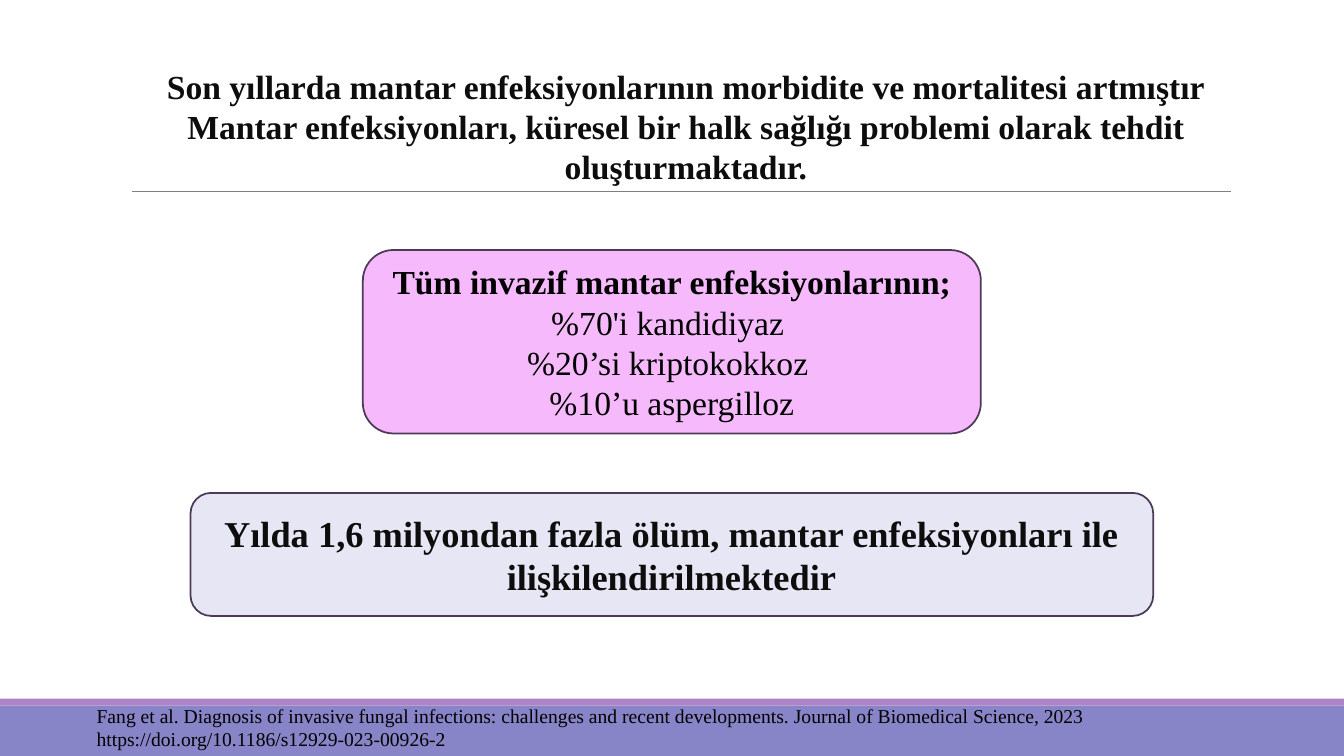
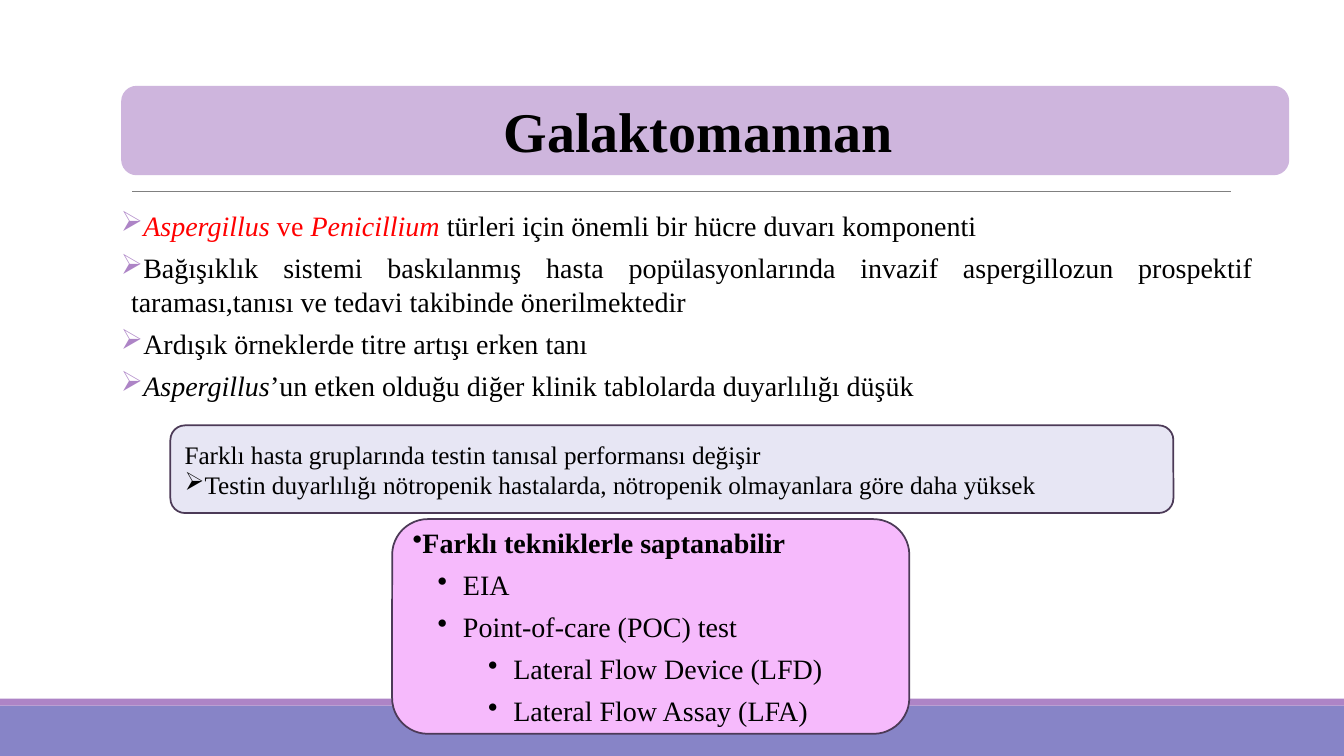
from lxml.etree import SubElement
from pptx import Presentation
from pptx.dml.color import RGBColor
from pptx.enum.shapes import MSO_CONNECTOR, MSO_SHAPE
from pptx.enum.text import MSO_ANCHOR, PP_ALIGN
from pptx.oxml.ns import qn
from pptx.util import Inches, Pt

WIDTH, HEIGHT = Inches(13.333), Inches(7.5)
FONT = "Times New Roman"
BLACK, INK, RED = "000000", "0D0D0D", "FF0000"
PURPLE, BLUE, OUTLINE, GREY = "AD84C6", "8784C7", "4C3A57", "808080"
PINK, LAVENDER, LILAC = "F6BAFC", "E7E6F4", "CEB5DD"
LEFT, CENTER, JUSTIFY = PP_ALIGN.LEFT, PP_ALIGN.CENTER, PP_ALIGN.JUSTIFY


def rgb(value):
    return RGBColor.from_string(value)


def share_x(percent):
    return int(WIDTH * percent / 100)


def share_y(percent):
    return int(HEIGHT * percent / 100)


def place(left, top, width, height):
    return share_x(left), share_y(top), share_x(width), share_y(height)


def add_panel(slide, area, fill, line=None, kind=MSO_SHAPE.ROUNDED_RECTANGLE):
    sp = slide.shapes.add_shape(kind, *place(*area))
    sp.shadow.inherit = False
    sp.fill.solid()
    sp.fill.fore_color.rgb = rgb(fill)
    if line:
        sp.line.color.rgb = rgb(line)
        sp.line.width = Pt(1.25)
    else:
        sp.line.fill.background()
    sp.text_frame.vertical_anchor = MSO_ANCHOR.MIDDLE
    return sp.text_frame


def add_text(slide, area):
    return slide.shapes.add_textbox(*place(*area)).text_frame


def add_rule(slide, left, right, y):
    line = slide.shapes.add_connector(
        MSO_CONNECTOR.STRAIGHT, share_x(left), share_y(y), share_x(right), share_y(y))
    line.line.color.rgb = rgb(GREY)
    line.line.width = Pt(0.5)
    SubElement(line._element.spPr, qn("a:effectLst"))


def set_bullet(p, char, color=None, margin=0, indent=0):
    pPr = p._p.get_or_add_pPr()
    pPr.set("marL", str(Inches(margin)))
    pPr.set("indent", str(Inches(indent)))
    if color:
        SubElement(SubElement(pPr, qn("a:buClr")), qn("a:srgbClr")).set("val", color)
    SubElement(pPr, qn("a:buChar")).set("char", char)


def format_run(r, size, color, bold=False, italic=False):
    r.font.name = FONT
    r.font.size = Pt(size)
    r.font.color.rgb = rgb(color)
    r.font.bold = bold
    r.font.italic = italic


def write(tf, paragraphs, size, color=BLACK, align=CENTER, bold=False, after=0):
    tf.word_wrap = True
    for i, text in enumerate(paragraphs):
        p = tf.add_paragraph() if i else tf.paragraphs[0]
        p.alignment = align
        p.space_after = Pt(after)
        if isinstance(text, str):
            p.text = text
            for r in p.runs:
                format_run(r, size, color, bold)
        else:
            for words, run_color, italic in text:
                r = p.add_run()
                r.text = words
                format_run(r, size, run_color, bold, italic)
    return tf.paragraphs


def embolden(p):
    for r in p.runs:
        r.font.bold = True


def new_slide(prs):
    slide = prs.slides.add_slide(prs.slide_layouts[6])
    add_panel(slide, (0, 93.33, 100, 6.67), BLUE, kind=MSO_SHAPE.RECTANGLE)
    add_panel(slide, (0, 92.4, 100, 0.93), PURPLE, kind=MSO_SHAPE.RECTANGLE)
    add_rule(slide, 9.83, 91.58, 25.33)
    return slide


def burden_slide(prs):
    slide = new_slide(prs)
    deaths = add_panel(slide, (14.18, 65.2, 71.63, 16.27), LAVENDER, OUTLINE)
    write(deaths, ["Yılda 1,6 milyondan fazla ölüm, mantar enfeksiyonları ile "
                   "ilişkilendirilmektedir"], 26, INK, bold=True)
    causes = add_panel(slide, (27, 33.07, 45.98, 24.27), PINK, OUTLINE)
    ps = write(causes, ["Tüm invazif mantar enfeksiyonlarının;", "%70'i kandidiyaz ",
                        "%20’si kriptokokkoz ", "%10’u aspergilloz"], 24)
    embolden(ps[0])
    citation = add_text(slide, (6.45, 92.4, 91.8, 7.6))
    write(citation, ["Fang et al. Diagnosis of invasive fungal infections: challenges and "
                     "recent developments. Journal of Biomedical Science, 2023 "
                     "https://doi.org/10.1186/s12929-023-00926-2"], 14, align=LEFT)
    heading = add_text(slide, (3.94, 8, 94.2, 17.47))
    write(heading, ["Son yıllarda mantar enfeksiyonlarının morbidite ve mortalitesi artmıştır\n"
                    "Mantar enfeksiyonları, küresel bir halk sağlığı problemi olarak tehdit "
                    "oluşturmaktadır."], 24, INK, bold=True)


def galactomannan_slide(prs):
    slide = new_slide(prs)
    body = add_text(slide, (9, 26.93, 84.23, 70.27))
    body.margin_left = body.margin_right = 0
    facts = [
        [("Aspergillus", RED, True), (" ve ", RED, False), ("Penicillium ", RED, True),
         ("türleri için önemli bir hücre duvarı komponenti", BLACK, False)],
        "Bağışıklık sistemi baskılanmış hasta popülasyonlarında invazif aspergillozun "
        "prospektif taraması,tanısı ve tedavi takibinde önerilmektedir",
        "Ardışık örneklerde titre artışı erken tanı ",
        [("Aspergillus", BLACK, True),
         ("’un etken olduğu diğer klinik tablolarda duyarlılığı düşük", BLACK, False)],
    ]
    for p in write(body, facts, 20, align=JUSTIFY, after=6):
        set_bullet(p, "➢", PURPLE, 0.1, -0.1)

    banner = add_panel(slide, (9.08, 11.47, 86.78, 11.6), LILAC, LILAC)
    write(banner, ["Galaktomannan "], 40, bold=True)

    performance = add_panel(slide, (12.68, 56.27, 74.63, 11.6), LAVENDER, OUTLINE)
    ps = write(performance, [
        "Farklı hasta gruplarında testin tanısal performansı değişir",
        "Testin duyarlılığı nötropenik hastalarda, nötropenik olmayanlara göre daha yüksek",
    ], 18, align=JUSTIFY)
    set_bullet(ps[1], "➢")

    techniques = add_panel(slide, (29.18, 68.67, 38.48, 28.4), PINK, OUTLINE)
    ps = write(techniques, [
        "Farklı tekniklerle saptanabilir", "EIA", "Point-of-care (POC) test",
        "Lateral Flow Device (LFD)", "Lateral Flow Assay (LFA) ",
    ], 20, align=JUSTIFY, after=6)
    embolden(ps[0])
    for p, level in zip(ps, (0, 1, 1, 2, 2)):
        p.level = level
        set_bullet(p, "•", margin=level / 2, indent=-0.25 if level else 0)


def main():
    prs = Presentation()
    prs.slide_width, prs.slide_height = WIDTH, HEIGHT
    burden_slide(prs)
    galactomannan_slide(prs)
    prs.save("out.pptx")


if __name__ == "__main__":
    main()
